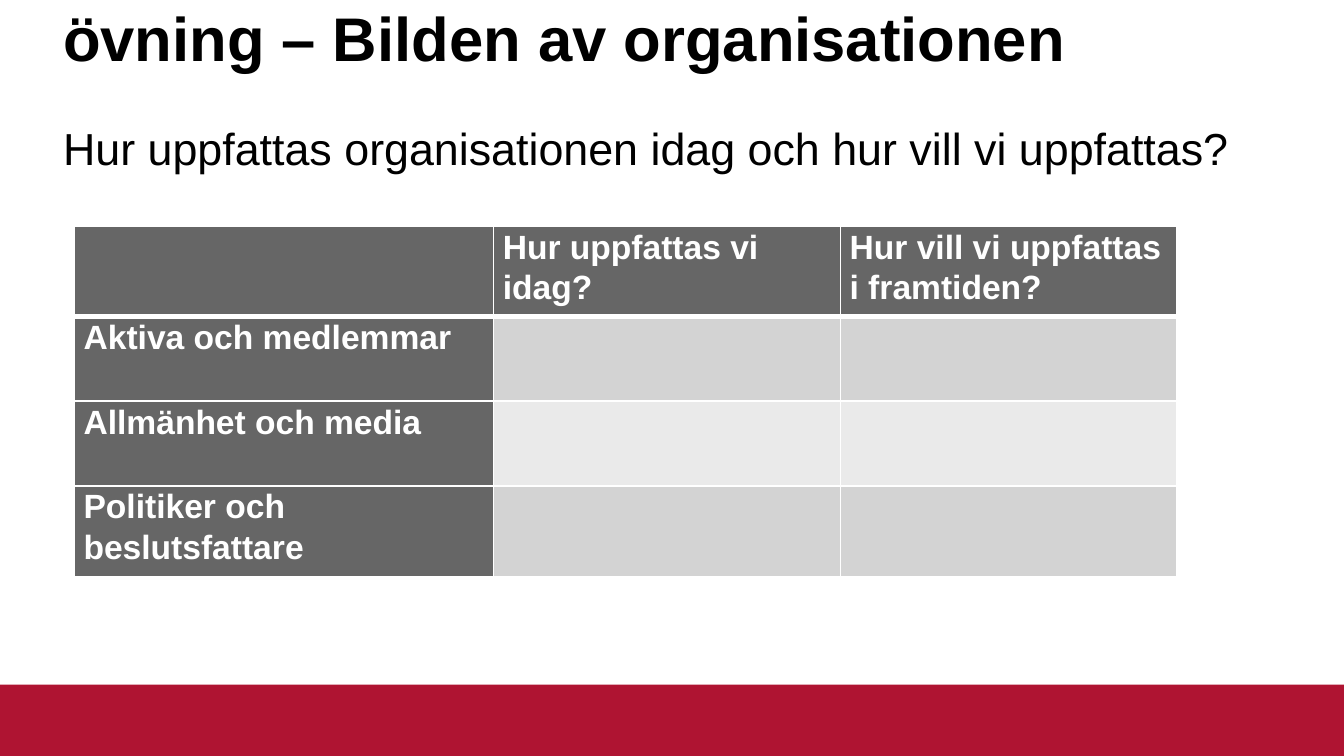
from copy import deepcopy
from dataclasses import dataclass

from pptx import Presentation
from pptx.dml.color import RGBColor
from pptx.enum import shapes, text
from pptx.oxml import ns, xmlchemy as xml
from pptx.util import Pt


@dataclass(frozen=True)
class Theme:
    font: str = "Arial"
    black: str = "000000"
    white: str = "FFFFFF"
    red: str = "AF1432"
    head: str = "666666"
    bands: tuple = ("D3D3D3", "EAEAEA")
    title: int = 33
    body: int = 24
    cell: int = 18


THEME = Theme()
LEFT, WIDE = 33.75, 652.5
COLS = (224.6, 185.8, 180)
ROWS = (48.5, 45.3, 45.3, 48.7)
CELLS = (
    ("", "Hur uppfattas vi idag?", "Hur vill vi uppfattas i framtiden?"),
    ("Aktiva och medlemmar", "", ""),
    ("Allmänhet och media", "", ""),
    ("Politiker och beslutsfattare", "", ""),
)


def paint(fill, color):
    fill.solid()
    fill.fore_color.rgb = RGBColor.from_string(color)


def write(para, words, size, color, bold=False):
    run = para.add_run()
    run.text = words
    font = run.font
    font.name, font.size, font.bold = THEME.font, Pt(size), bold
    font.color.rgb = RGBColor.from_string(color)
    return run


def place(holder, top, high, anchor):
    """Move a placeholder and return its first paragraph."""
    holder.left, holder.top = Pt(LEFT), Pt(top)
    holder.width, holder.height = Pt(WIDE), Pt(high)
    frame = holder.text_frame
    frame.word_wrap = True
    frame.auto_size = text.MSO_AUTO_SIZE.NONE
    frame.vertical_anchor = anchor
    frame.margin_left = frame.margin_right = 0
    frame.margin_top = frame.margin_bottom = 0
    para = frame.paragraphs[0]
    para.alignment = text.PP_ALIGN.LEFT
    para.line_spacing = 0.9
    return para


def add_band(slide, deck):
    high = Pt(38.2)
    band = slide.shapes.add_shape(
        shapes.MSO_SHAPE.RECTANGLE, 0, deck.slide_height - high,
        deck.slide_width, high)
    band.shadow.inherit = False
    paint(band.fill, THEME.red)
    band.line.fill.background()


def add_title(slide):
    para = place(slide.shapes.title, 22.3, 39.6, text.MSO_ANCHOR.MIDDLE)
    run = write(para, "övning – Bilden av organisationen ",
                THEME.title, THEME.black, True)
    # The closing line break takes the size of the title text
    para.add_line_break()
    props = run.font._element
    para._p[-1].append(deepcopy(props))
    end = xml.OxmlElement("a:endParaRPr")
    end.set("sz", props.get("sz"))
    para._p.append(end)


def add_body(slide):
    para = place(slide.placeholders[1], 67.7, 292.3, text.MSO_ANCHOR.TOP)
    props = para._p.get_or_add_pPr()
    props.set("marL", "0")
    props.set("indent", "0")
    para.space_before = Pt(0)
    props.append(xml.OxmlElement("a:buNone"))
    write(para, "Hur uppfattas organisationen idag och hur vill vi uppfattas?",
          THEME.body, THEME.black)


def add_edges(cell, base):
    props = cell._tc.get_or_add_tcPr()
    edges = {"L": 1, "R": 1, "T": 1, "B": base}
    for spot, (side, width) in enumerate(edges.items()):
        line = xml.OxmlElement(f"a:ln{side}")
        line.set("w", str(Pt(width)))
        fill = xml.OxmlElement("a:solidFill")
        color = xml.OxmlElement("a:srgbClr")
        color.set("val", THEME.white)
        fill.append(color)
        line.append(fill)
        props.insert(spot, line)


def fill_cell(cell, words, row, col):
    cell.margin_left = cell.margin_right = Pt(5)
    cell.margin_top = cell.margin_bottom = 0
    label = row == 0 or col == 0
    paint(cell.fill, THEME.head if label else THEME.bands[(row - 1) % 2])
    add_edges(cell, 3 if row == 0 else 1)
    if words:
        para = cell.text_frame.paragraphs[0]
        para.line_spacing = 1.07
        write(para, words, THEME.cell, THEME.white, True)


def add_grid(slide):
    frame = slide.shapes.add_table(
        len(ROWS), len(COLS), Pt(39.8), Pt(121.2),
        Pt(sum(COLS)), Pt(sum(ROWS)))
    grid = frame.table
    for col, width in zip(grid.columns, COLS):
        col.width = Pt(width)
    for row, high in zip(grid.rows, ROWS):
        row.height = Pt(high)
    for r, line in enumerate(CELLS):
        for c, words in enumerate(line):
            fill_cell(grid.cell(r, c), words, r, c)


def main():
    deck = Presentation()
    deck.slide_width, deck.slide_height = Pt(720), Pt(405)
    slide = deck.slides.add_slide(deck.slide_layouts[1])
    paint(slide.background.fill, THEME.white)

    # Red foot band
    add_band(slide, deck)
    # Heading and question
    add_title(slide)
    add_body(slide)
    # Table of views today and in future
    add_grid(slide)
    deck.save("out.pptx")


if __name__ == "__main__":
    main()
